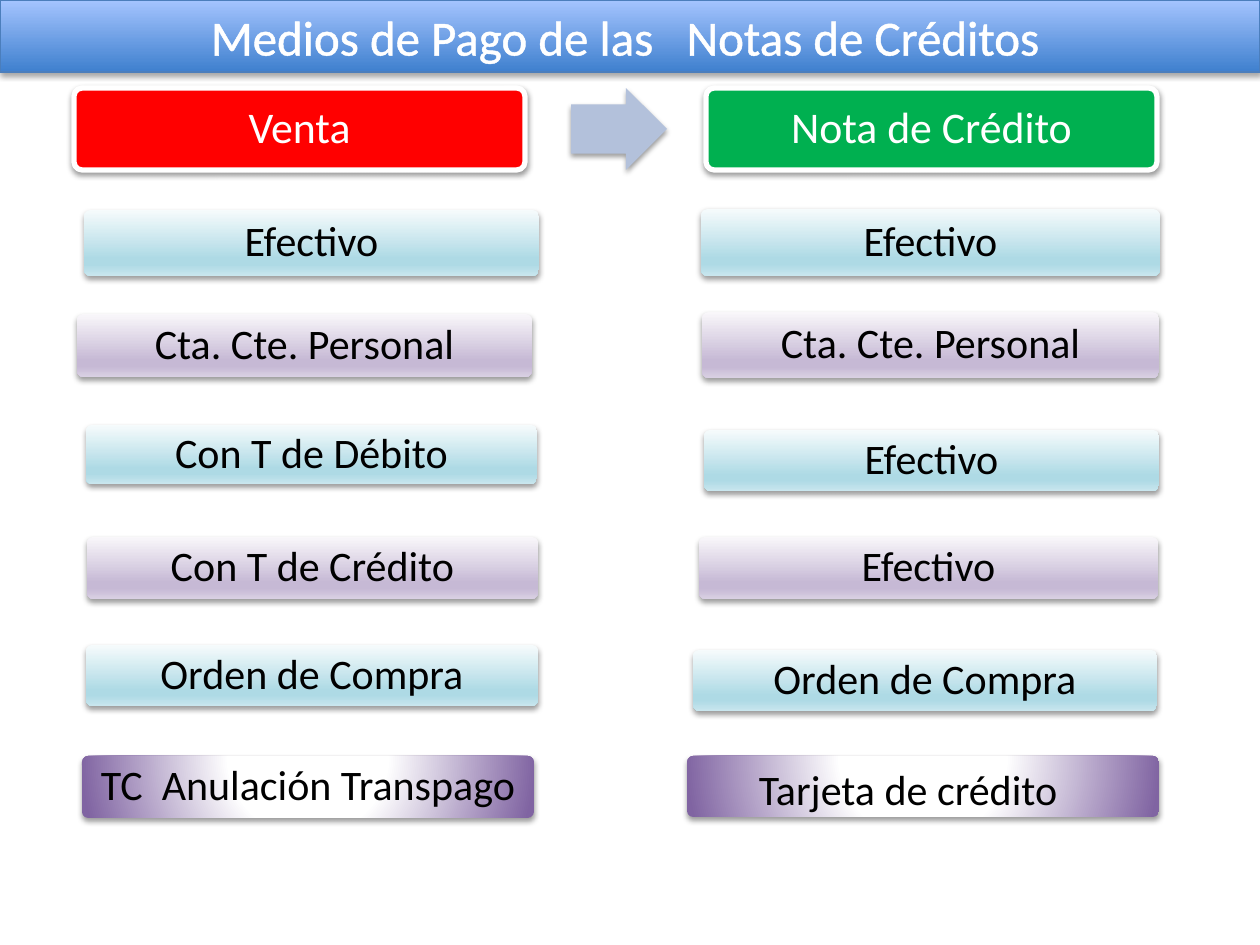
from dataclasses import dataclass
from typing import Optional

from lxml.etree import SubElement
from pptx import Presentation
from pptx.dml.color import RGBColor
from pptx.enum.shapes import MSO_SHAPE
from pptx.enum.text import MSO_ANCHOR, MSO_AUTO_SIZE, PP_ALIGN
from pptx.oxml.ns import qn
from pptx.util import Emu, Pt

EMU_PER_PX = 914400 / 126

WHITE = RGBColor(0xFF, 0xFF, 0xFF)
BLACK = RGBColor(0x00, 0x00, 0x00)
RED = RGBColor(0xFF, 0x00, 0x00)
GREEN = RGBColor(0x00, 0xB0, 0x50)
ARROW_BLUE = RGBColor(0xB3, 0xC1, 0xDB)
BANNER_DARK = RGBColor(0x3F, 0x80, 0xCE)
BANNER_LIGHT = RGBColor(0xA4, 0xC4, 0xFF)
BANNER_EDGE = RGBColor(0x4B, 0x7E, 0xBC)
AQUA_PALE = RGBColor(0xF6, 0xFB, 0xFC)
AQUA = RGBColor(0xAE, 0xDA, 0xE5)
AQUA_SOFT = RGBColor(0xC9, 0xE6, 0xEE)
LILAC_PALE = RGBColor(0xF9, 0xF7, 0xFA)
LILAC = RGBColor(0xC6, 0xB9, 0xD5)
LILAC_SOFT = RGBColor(0xD9, 0xD0, 0xE3)
PURPLE = RGBColor(0x80, 0x64, 0xA2)


@dataclass(frozen=True)
class Gradient:
    stops: tuple  # (percent, colour)
    angle: Optional[int] = None  # degrees; None spreads from the centre


@dataclass(frozen=True)
class Box:
    left: int
    top: int
    width: int
    height: int


@dataclass(frozen=True)
class Card:
    box: Box
    words: tuple  # parts set apart by a wide space
    fill: object
    size: int = 24
    color: RGBColor = BLACK
    border: Optional[RGBColor] = None


BANNER = Gradient(((0, BANNER_DARK), (100, BANNER_LIGHT)), 270)
AQUA_FILL = Gradient(((0, AQUA_PALE), (74, AQUA), (83, AQUA), (100, AQUA_SOFT)), 90)
LILAC_FILL = Gradient(((0, LILAC_PALE), (74, LILAC), (83, LILAC), (100, LILAC_SOFT)), 90)
GLOW_FILL = Gradient(((0, WHITE), (35, WHITE), (100, PURPLE)))


def px(length: int) -> Emu:
    return Emu(round(length * EMU_PER_PX))


def place(shape, box: Box) -> None:
    for side in ("left", "top", "width", "height"):
        setattr(shape, side, px(getattr(box, side)))


def paint(shape, fill) -> None:
    if isinstance(fill, RGBColor):
        shape.fill.solid()
        shape.fill.fore_color.rgb = fill
        return
    shape.fill.gradient()
    gradient = shape._element.spPr.find(qn("a:gradFill"))
    for child in list(gradient):
        gradient.remove(child)
    stops = SubElement(gradient, qn("a:gsLst"))
    for percent, color in fill.stops:
        stop = SubElement(stops, qn("a:gs"), pos=str(percent * 1000))
        SubElement(stop, qn("a:srgbClr"), val=str(color))
    if fill.angle is None:
        spread = SubElement(gradient, qn("a:path"), {"path": "circle"})
        SubElement(spread, qn("a:fillToRect"), l="50000", t="-80000", r="50000", b="180000")
    else:
        SubElement(gradient, qn("a:lin"), ang=str(fill.angle * 60000), scaled="0")


def cast_shadow(shape, distance: float, opacity: int) -> None:
    shape.shadow.inherit = False
    effects = shape._element.spPr.find(qn("a:effectLst"))
    shadow = SubElement(effects, qn("a:outerShdw"), blurRad=str(Pt(3.1)),
                        dist=str(Pt(distance)), dir="5400000", rotWithShape="0")
    color = SubElement(shadow, qn("a:srgbClr"), val=str(BLACK))
    SubElement(color, qn("a:alpha"), val=str(opacity * 1000))


def write(shape, words: tuple, size: int, color: RGBColor, gap: float,
          line_spacing: float = 0.9, **frame_format) -> None:
    """Write words on one line; gap is the extra space between them in points."""
    frame = shape.text_frame
    defaults = {"word_wrap": True, "auto_size": MSO_AUTO_SIZE.NONE,
                "vertical_anchor": MSO_ANCHOR.MIDDLE, "margin_left": px(12),
                "margin_right": px(12), "margin_top": 0, "margin_bottom": 0}
    for name, value in {**defaults, **frame_format}.items():
        setattr(frame, name, value)
    paragraph = frame.paragraphs[0]
    paragraph.alignment = PP_ALIGN.CENTER
    paragraph.line_spacing = line_spacing
    for index, word in enumerate(words):
        for text in ([" "] if index else []) + [word]:
            run = paragraph.add_run()
            run.text = text
            for name, value in {"name": "Calibri", "size": Pt(size)}.items():
                setattr(run.font, name, value)
            run.font.color.rgb = color
            if text == " ":
                run._r.get_or_add_rPr().set("spc", str(round(gap * 100)))


def draw_shape(slide, kind: MSO_SHAPE, box: Box, fill, adjustments: tuple,
               border: Optional[RGBColor] = None):
    shape = slide.shapes.add_shape(kind, *map(px, (box.left, box.top, box.width, box.height)))
    for index, value in enumerate(adjustments):
        shape.adjustments[index] = value
    paint(shape, fill)
    if border is None:
        shape.line.fill.background()
    else:
        shape.line.color.rgb = border
        shape.line.width = Pt(3)
    cast_shadow(shape, 1.6, 38)
    return shape


def draw_card(slide, card: Card) -> None:
    shape = draw_shape(slide, MSO_SHAPE.ROUNDED_RECTANGLE, card.box, card.fill, (0.1,), card.border)
    write(shape, card.words, card.size, card.color, gap=5.4)


def draw_title(slide) -> None:
    title = slide.shapes.title
    place(title, Box(0, 0, 1260, 72))
    paint(title, BANNER)
    title.line.color.rgb = BANNER_EDGE
    title.line.width = Pt(0.75)
    cast_shadow(title, 1.8, 35)
    write(title, ("Medios de Pago de las", "Notas de Créditos"), 28, WHITE, gap=12.7,
          line_spacing=1.0, margin_right=px(22))
    # White outline thickens the letters; it comes first in the run properties
    for run in title.text_frame.paragraphs[0].runs:
        properties = run._r.get_or_add_rPr()
        outline = SubElement(properties, qn("a:ln"), w=str(Pt(1.45)))
        solid = SubElement(outline, qn("a:solidFill"))
        SubElement(solid, qn("a:srgbClr"), val=str(WHITE))
        properties.insert(0, outline)


HEADINGS = (
    Card(Box(74, 88, 451, 82), ("Venta",), RED, 25, WHITE, WHITE),
    Card(Box(706, 88, 451, 82), ("Nota de Crédito",), GREEN, 25, WHITE, WHITE),
)
SALES = (
    Card(Box(84, 210, 455, 66), ("Efectivo",), AQUA_FILL),
    Card(Box(77, 314, 455, 63), ("Cta. Cte. Personal",), LILAC_FILL),
    Card(Box(86, 425, 451, 59), ("Con T de Débito",), AQUA_FILL),
    Card(Box(87, 537, 451, 62), ("Con T de Crédito",), LILAC_FILL),
    Card(Box(86, 645, 452, 61), ("Orden de Compra",), AQUA_FILL),
    Card(Box(82, 756, 452, 62), ("TC", "Anulación Transpago"), GLOW_FILL),
)
CREDIT_NOTES = (
    Card(Box(701, 209, 459, 67), ("Efectivo",), AQUA_FILL),
    Card(Box(702, 312, 457, 66), ("Cta. Cte. Personal",), LILAC_FILL),
    Card(Box(704, 430, 455, 61), ("Efectivo",), AQUA_FILL),
    Card(Box(699, 537, 459, 62), ("Efectivo",), LILAC_FILL),
    Card(Box(693, 650, 464, 61), ("Orden de Compra",), AQUA_FILL),
)


def main() -> None:
    deck = Presentation()
    deck.slide_width, deck.slide_height = px(1260), px(945)
    slide = deck.slides.add_slide(deck.slide_layouts[5])
    draw_title(slide)

    # Headings and the arrow between them
    draw_shape(slide, MSO_SHAPE.RIGHT_ARROW, Box(571, 88, 96, 82), ARROW_BLUE, (0.6, 0.5))
    for card in HEADINGS + SALES + CREDIT_NOTES:
        draw_card(slide, card)

    # Card refund, set from the left and top
    refund = draw_shape(slide, MSO_SHAPE.ROUNDED_RECTANGLE, Box(687, 756, 472, 61),
                        GLOW_FILL, (0.1,))
    write(refund, ("Tarjeta de crédito",), 24, BLACK, gap=0, line_spacing=1.0,
          vertical_anchor=MSO_ANCHOR.TOP, margin_left=px(70), margin_top=px(6))
    refund.text_frame.paragraphs[0].alignment = PP_ALIGN.LEFT

    deck.save("out.pptx")


if __name__ == "__main__":
    main()
